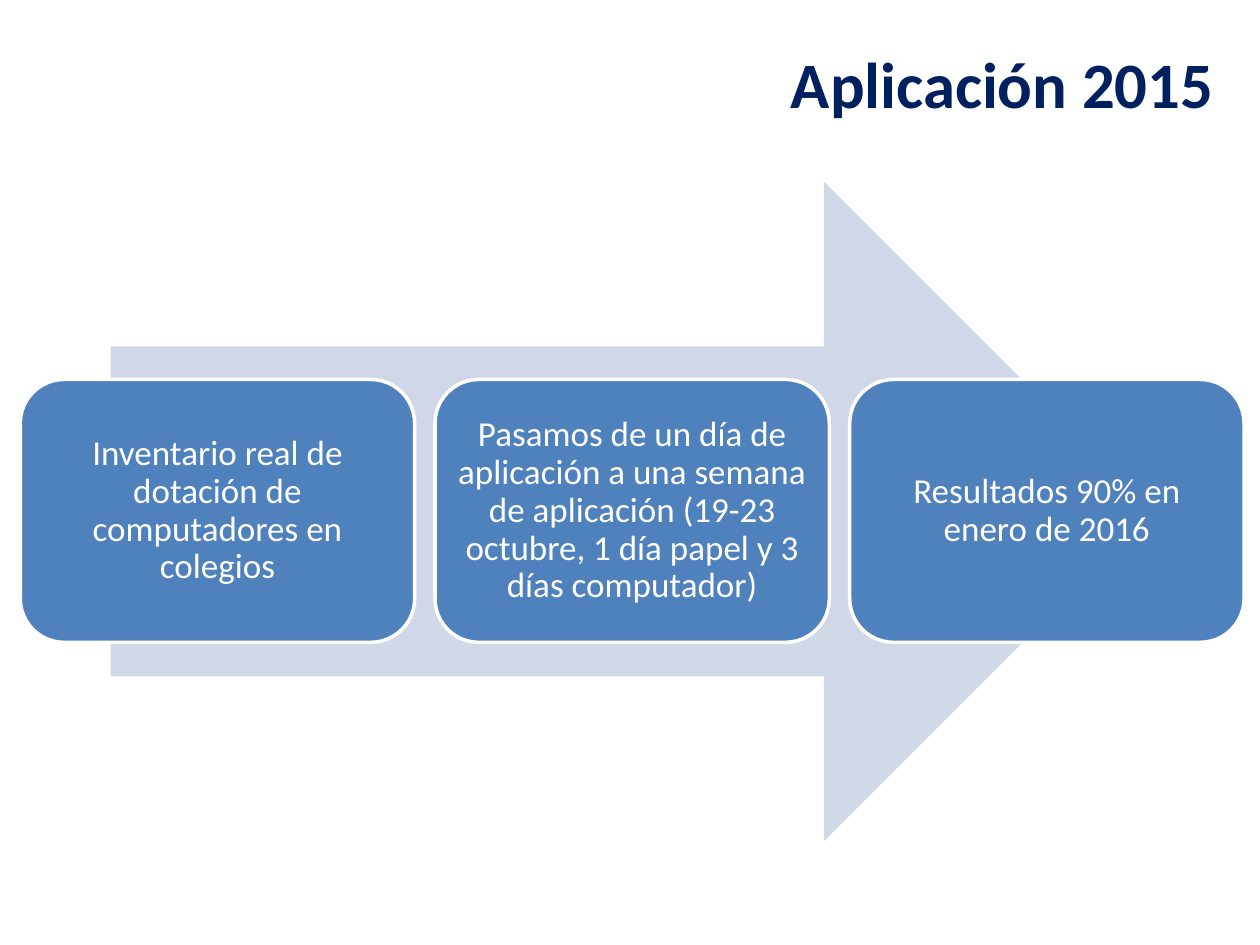
import dataclasses

import pptx
import pptx.dml.color
import pptx.enum.shapes
import pptx.enum.text
import pptx.util

Cm = pptx.util.Cm
Pt = pptx.util.Pt
RGB = pptx.dml.color.RGBColor
SHAPE = pptx.enum.shapes.MSO_SHAPE
ALIGN = pptx.enum.text.PP_ALIGN
ANCHOR = pptx.enum.text.MSO_ANCHOR


@dataclasses.dataclass(frozen=True)
class Theme:
    font: str = "Calibri"
    title_size: int = 37
    step_size: int = 20
    navy: RGB = RGB(0x00, 0x20, 0x60)
    blue: RGB = RGB(0x4F, 0x81, 0xBD)
    pale: RGB = RGB(0xD0, 0xD8, 0xE8)
    white: RGB = RGB(0xFF, 0xFF, 0xFF)


THEME = Theme()
STEPS = [
    "Inventario real de dotación de computadores en colegios",
    "Pasamos de un día de aplicación a una semana de aplicación "
    "(19-23 octubre, 1 día papel y 3 días computador)",
    "Resultados 90% en enero de 2016",
]
STEP_LEFT, STEP_TOP, STEP_W, STEP_H = 0.41, 7.65, 7.95, 5.3
STEP_PITCH = 8.36


def write(tf, text, size, color, align, anchor, inset_x, inset_y, bold=False):
    tf.word_wrap = True
    tf.auto_size = pptx.enum.text.MSO_AUTO_SIZE.NONE
    tf.vertical_anchor = anchor
    tf.margin_left = tf.margin_right = Cm(inset_x)
    tf.margin_top = tf.margin_bottom = Cm(inset_y)
    p = tf.paragraphs[0]
    p.alignment = align
    r = p.add_run()
    r.text = text
    r.font.name = THEME.font
    r.font.size = Pt(size)
    r.font.bold = bold
    r.font.color.rgb = color
    return p


def add_title(s, text):
    sp = s.shapes.title
    sp.left, sp.top, sp.width, sp.height = Cm(3.05), Cm(0.79), Cm(21.59), Cm(1.6)
    write(sp.text_frame, text, THEME.title_size, THEME.navy,
          ALIGN.RIGHT, ANCHOR.TOP, 0.18, 0.1, bold=True)


def add_filled(shapes, kind, left, top, width, height, color):
    sp = shapes.add_shape(kind, Cm(left), Cm(top), Cm(width), Cm(height))
    sp.shadow.inherit = False
    sp.fill.solid()
    sp.fill.fore_color.rgb = color
    sp.line.fill.background()
    return sp


def add_step(shapes, index, text):
    sp = add_filled(shapes, SHAPE.ROUNDED_RECTANGLE, STEP_LEFT + index * STEP_PITCH,
                    STEP_TOP, STEP_W, STEP_H, THEME.blue)
    sp.line.color.rgb = THEME.white
    sp.line.width = Pt(2)
    p = write(sp.text_frame, text, THEME.step_size, THEME.white,
              ALIGN.CENTER, ANCHOR.MIDDLE, 0.2, 0.2)
    p.line_spacing = 0.9


def add_process(s, steps):
    shapes = s.shapes.add_group_shape().shapes
    add_filled(shapes, SHAPE.RIGHT_ARROW, 2.23, 3.66, 21.03, 13.3, THEME.pale)
    for index, text in enumerate(steps):
        add_step(shapes, index, text)


def main():
    prs = pptx.Presentation()
    prs.slide_width, prs.slide_height = Cm(25.4), Cm(19.05)
    s = prs.slides.add_slide(prs.slide_layouts[5])
    add_title(s, "Aplicación 2015")
    add_process(s, STEPS)
    prs.save("out.pptx")


if __name__ == "__main__":
    main()
